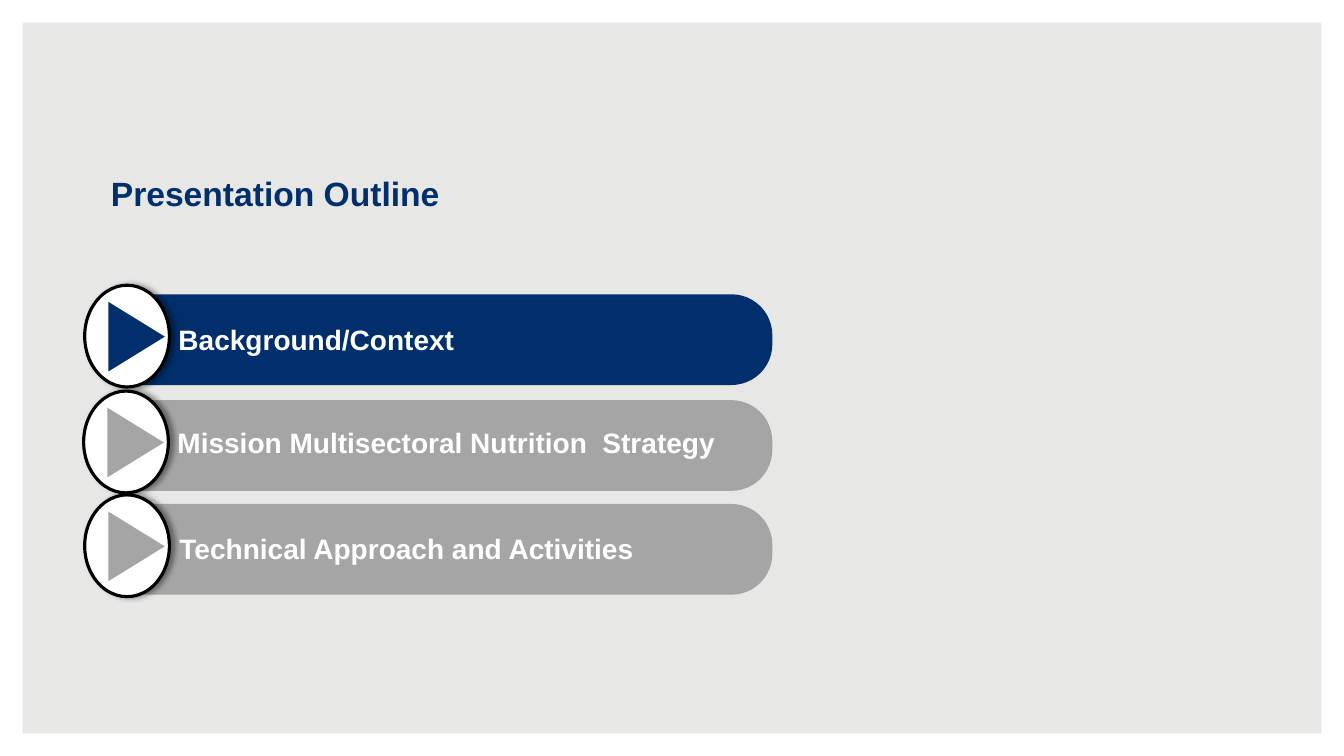
from dataclasses import dataclass

from lxml import etree
from pptx import Presentation
from pptx import util as u
from pptx.dml.color import RGBColor
from pptx.enum import shapes, text
from pptx.oxml.ns import qn
from pptx.shapes.autoshape import Shape
from pptx.slide import Slide

PX = 9144  # 100 px to the inch
NAVY = RGBColor(0x00, 0x2F, 0x6C)
GRAY = RGBColor(0xA5, 0xA5, 0xA5)
PALE = RGBColor(0xE7, 0xE7, 0xE5)
WHITE = RGBColor(0xFF, 0xFF, 0xFF)
BLACK = RGBColor(0x00, 0x00, 0x00)
PAGE_WIDTH, PAGE_HEIGHT = 1333, 750
BAR_RIGHT = 766
KIND = shapes.MSO_SHAPE


@dataclass
class Section:
    title: str
    color: RGBColor
    left: int
    top: int
    label_left: int
    label_top: int
    label_width: int


SECTIONS = [
    Section("Background/Context", NAVY, 84, 292, 177, 320, 569),
    Section("Mission Multisectoral Nutrition  Strategy", GRAY, 83, 397, 176, 422, 541),
    Section("Technical Approach and Activities", GRAY, 84, 500, 178, 527, 477),
]


def place(shape: Shape, left: int, top: int, width: int, height: int) -> None:
    shape.left, shape.top = left * PX, top * PX
    shape.width, shape.height = width * PX, height * PX


def add_solid(page: Slide, kind: shapes.MSO_SHAPE, left: int, top: int,
              width: int, height: int, color: RGBColor) -> Shape:
    """Add a flat preset shape without line or shadow."""
    shape = page.shapes.add_shape(kind, left * PX, top * PX, width * PX, height * PX)
    shape.shadow.inherit = False
    shape.fill.solid()
    shape.fill.fore_color.rgb = color
    shape.line.fill.background()
    return shape


def add_shadow(shape: Shape) -> None:
    """Cast a soft black shadow to the right."""
    effects = shape._element.spPr.find(qn("a:effectLst"))
    shadow = etree.SubElement(effects, qn("a:outerShdw"), blurRad=str(u.Pt(4)),
                              dist=str(u.Pt(3)), dir="0", algn="l", rotWithShape="0")
    color = etree.SubElement(shadow, qn("a:srgbClr"), val=str(BLACK))
    etree.SubElement(color, qn("a:alpha"), val="40000")


def write(box: Shape, words: str, size: int, color: RGBColor, inset: int) -> None:
    frame = box.text_frame
    frame.word_wrap = True
    frame.auto_size = text.MSO_AUTO_SIZE.NONE
    frame.vertical_anchor = text.MSO_ANCHOR.MIDDLE
    frame.margin_left = frame.margin_right = inset * PX
    frame.margin_top = frame.margin_bottom = inset * PX
    para = frame.paragraphs[0]
    para.alignment = text.PP_ALIGN.LEFT
    span = para.add_run()
    span.text = words
    span.font.name = "Arial"
    span.font.size = u.Pt(size)
    span.font.bold = True
    span.font.color.rgb = color


def add_section(page: Slide, section: Section) -> None:
    left, top = section.left, section.top
    bar = add_solid(page, KIND.ROUNDED_RECTANGLE, left, top, BAR_RIGHT - left, 90, section.color)
    bar.adjustments[0] = 0.45

    label = page.shapes.add_textbox(section.label_left * PX, section.label_top * PX,
                                    section.label_width * PX, 34 * PX)
    write(label, section.title, 20, WHITE, 0)

    circle = add_solid(page, KIND.OVAL, left, top - 9, 84, 101, WHITE)
    circle.line.color.rgb = BLACK
    circle.line.width = u.Pt(2.25)
    add_shadow(circle)

    arrow = add_solid(page, KIND.ISOSCELES_TRIANGLE, left + 17, top + 14, 69, 56, section.color)
    arrow.rotation = 90


def main() -> None:
    deck = Presentation()
    deck.slide_width, deck.slide_height = PAGE_WIDTH * PX, PAGE_HEIGHT * PX
    page = deck.slides.add_slide(deck.slide_layouts[5])
    page.background.fill.solid()
    page.background.fill.fore_color.rgb = PALE

    border = add_solid(page, KIND.FRAME, 0, 0, PAGE_WIDTH, PAGE_HEIGHT, WHITE)
    border.adjustments[0] = 0.03

    title = page.shapes.title
    place(title, 100, 158, 1133, 67)
    write(title, "Presentation Outline", 24, NAVY, 10)

    for section in SECTIONS:
        add_section(page, section)
    deck.save("out.pptx")


if __name__ == "__main__":
    main()
